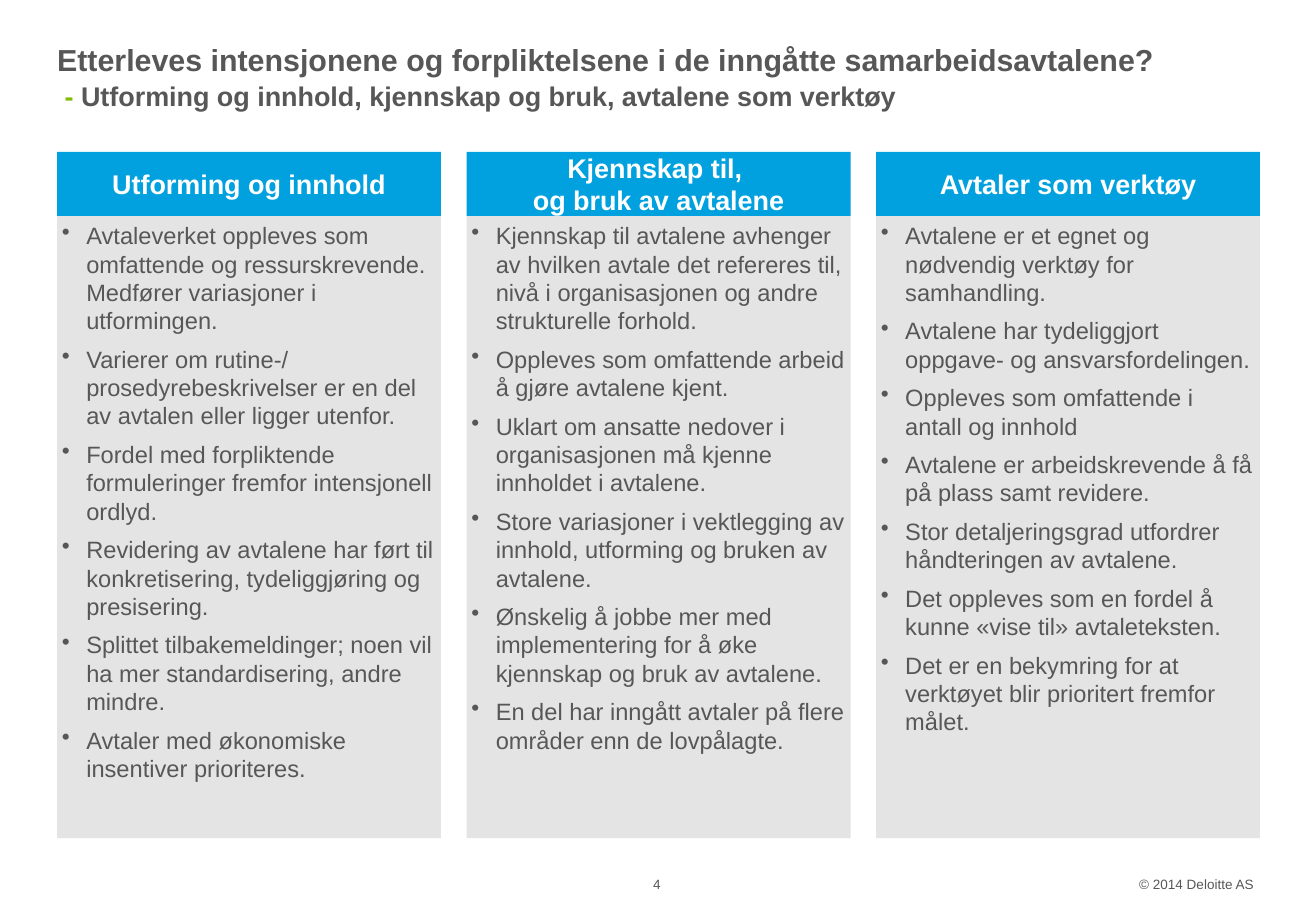
from dataclasses import dataclass

from lxml import etree
from pptx import Presentation
from pptx import util as u
from pptx.dml.color import RGBColor
from pptx.enum import shapes, text
from pptx.oxml import ns


@dataclass(frozen=True)
class Theme:
    font: str = "Arial"
    ink: str = "575757"
    green: str = "81BC00"
    blue: str = "00A1DE"
    panel: str = "E4E4E4"
    white: str = "FFFFFF"
    title_size: int = 18
    heading_size: int = 16
    body_size: int = 14
    footer_size: int = 8


TITLE = "Etterleves intensjonene og forpliktelsene i de inngåtte samarbeidsavtalene?"
SUBTITLE = "Utforming og innhold, kjennskap og bruk, avtalene som verktøy"

COLUMNS = [
    (["Utforming og innhold"], [
        "Avtaleverket oppleves som omfattende og ressurskrevende. Medfører variasjoner i utformingen.",
        "Varierer om rutine-/ prosedyrebeskrivelser er en del av avtalen eller ligger utenfor.",
        "Fordel med forpliktende formuleringer fremfor intensjonell ordlyd.",
        "Revidering av avtalene har ført til konkretisering, tydeliggjøring og presisering.",
        "Splittet tilbakemeldinger; noen vil ha mer standardisering, andre mindre.",
        "Avtaler med økonomiske insentiver prioriteres.",
    ]),
    (["Kjennskap til, ", "og bruk av avtalene"], [
        "Kjennskap til avtalene avhenger av hvilken avtale det refereres til, nivå i organisasjonen "
        "og andre strukturelle forhold.",
        "Oppleves som omfattende arbeid å gjøre avtalene kjent.",
        "Uklart om ansatte nedover i organisasjonen må kjenne innholdet i avtalene.",
        "Store variasjoner i vektlegging av innhold, utforming og bruken av avtalene.",
        "Ønskelig å jobbe mer med implementering for å øke kjennskap og bruk av avtalene.",
        "En del har inngått avtaler på flere områder enn de lovpålagte.",
    ]),
    (["Avtaler som verktøy"], [
        "Avtalene er et egnet og nødvendig verktøy for samhandling.",
        "Avtalene har tydeliggjort oppgave- og ansvarsfordelingen.",
        "Oppleves som omfattende i antall og innhold",
        "Avtalene er arbeidskrevende å få på plass samt revidere.",
        "Stor detaljeringsgrad utfordrer håndteringen av avtalene.",
        "Det oppleves som en fordel å kunne «vise til» avtaleteksten.",
        "Det er en bekymring for at verktøyet blir prioritert fremfor målet.",
    ]),
]

LEFT, PITCH, COLUMN_WIDTH = 0.47, 3.37, 3.16
HEADING_TOP, HEADING_HEIGHT = 1.25, 0.53
PANEL_HEIGHT = 5.12


class PageBuilder:
    def __init__(self, page, theme):
        self.page = page
        self.theme = theme

    def add_span(self, para, words, size, color, bold=False):
        span = para.add_run()
        span.text = words
        span.font.name = self.theme.font
        span.font.size = u.Pt(size)
        span.font.bold = bold
        span.font.color.rgb = RGBColor.from_string(color)

    def set_frame(self, box, inset, anchor):
        frame = box.text_frame
        frame.word_wrap = True
        frame.auto_size = text.MSO_AUTO_SIZE.NONE
        frame.vertical_anchor = anchor
        frame.margin_left = frame.margin_right = u.Inches(inset)
        frame.margin_top = frame.margin_bottom = u.Inches(inset)
        return frame

    def add_title(self, title, subtitle):
        box = self.page.shapes.title
        box.left, box.top = u.Inches(LEFT), u.Inches(0.32)
        box.width, box.height = u.Inches(9.89), u.Inches(0.65)
        para = self.set_frame(box, 0, text.MSO_ANCHOR.TOP).paragraphs[0]
        para.alignment = text.PP_ALIGN.LEFT
        para.line_spacing = 1.06
        theme = self.theme
        self.add_span(para, title, theme.title_size, theme.ink, True)
        para.add_line_break()
        self.add_span(para, " - ", theme.heading_size, theme.green, True)
        self.add_span(para, subtitle, theme.heading_size, theme.ink, True)

    def add_block(self, left, top, height, fill, anchor):
        """Add a filled column rectangle and return its text frame."""
        block = self.page.shapes.add_shape(
            shapes.MSO_SHAPE.RECTANGLE, u.Inches(left), u.Inches(top),
            u.Inches(COLUMN_WIDTH), u.Inches(height))
        block.shadow.inherit = False
        block.fill.solid()
        block.fill.fore_color.rgb = RGBColor.from_string(fill)
        block.line.fill.background()
        return self.set_frame(block, 0.04, anchor)

    def add_heading(self, left, lines):
        frame = self.add_block(left, HEADING_TOP, HEADING_HEIGHT,
                               self.theme.blue, text.MSO_ANCHOR.MIDDLE)
        para = frame.paragraphs[0]
        para.alignment = text.PP_ALIGN.CENTER
        for index, line in enumerate(lines):
            if index:
                para.add_line_break()
            self.add_span(para, line, self.theme.heading_size, self.theme.white, True)

    def add_bullets(self, left, items):
        frame = self.add_block(left, HEADING_TOP + HEADING_HEIGHT, PANEL_HEIGHT,
                               self.theme.panel, text.MSO_ANCHOR.TOP)
        for index, item in enumerate(items):
            para = frame.add_paragraph() if index else frame.paragraphs[0]
            properties = para._p.get_or_add_pPr()
            properties.set("marL", str(u.Inches(0.2)))
            properties.set("indent", str(-u.Inches(0.2)))
            etree.SubElement(properties, ns.qn("a:buChar"), char="•")
            para.alignment = text.PP_ALIGN.LEFT
            para.space_before = u.Pt(6 if index else 0)
            self.add_span(para, item, self.theme.body_size, self.theme.ink)

    def add_footer(self, left, width, words, alignment):
        box = self.page.shapes.add_textbox(
            u.Inches(left), u.Inches(7.19), u.Inches(width), u.Inches(0.15))
        para = self.set_frame(box, 0, text.MSO_ANCHOR.MIDDLE).paragraphs[0]
        para.alignment = alignment
        para.line_spacing = u.Pt(11.3)
        self.add_span(para, words, self.theme.footer_size, self.theme.ink)


def main():
    deck = Presentation()
    deck.slide_width, deck.slide_height = u.Inches(10.83), u.Inches(7.5)
    title_only = deck.slide_layouts[5]
    builder = PageBuilder(deck.slides.add_slide(title_only), Theme())
    builder.add_title(TITLE, SUBTITLE)
    for index, (heading, items) in enumerate(COLUMNS):
        left = LEFT + index * PITCH
        builder.add_heading(left, heading)
        builder.add_bullets(left, items)
    builder.add_footer(5.2, 0.41, "4", text.PP_ALIGN.CENTER)
    builder.add_footer(9.22, 1.1, "© 2014 Deloitte AS", text.PP_ALIGN.RIGHT)
    deck.save("out.pptx")


if __name__ == "__main__":
    main()
